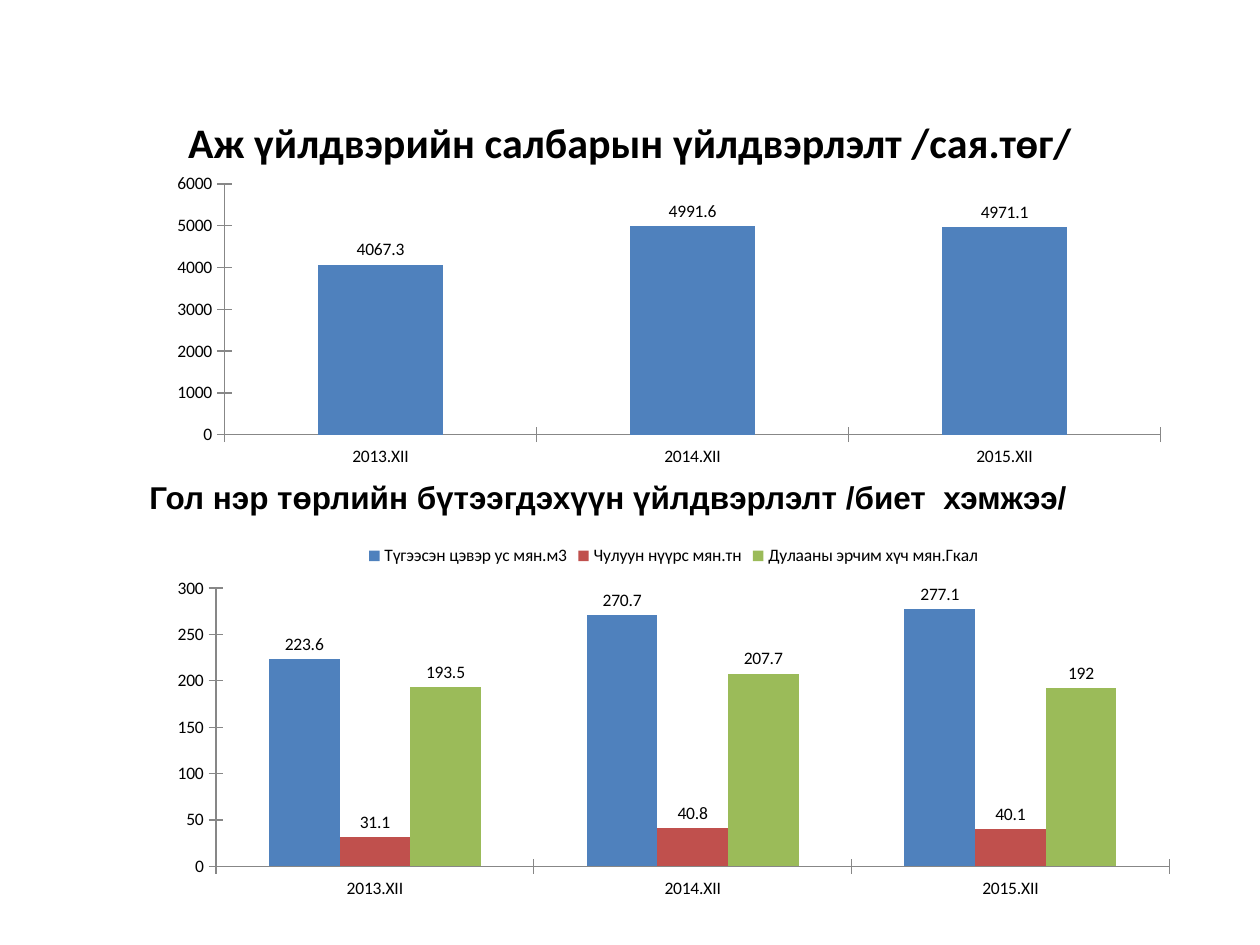
"""Builds a slide with two column charts on industrial output."""
from pptx import Presentation
from pptx.chart.data import CategoryChartData
from pptx.dml.color import RGBColor
from pptx.enum.chart import XL_CHART_TYPE, XL_LABEL_POSITION, XL_LEGEND_POSITION, XL_TICK_MARK
from pptx.enum.text import MSO_ANCHOR, MSO_AUTO_SIZE, PP_ALIGN
from pptx.util import Emu, Pt

BLACK = RGBColor(0x00, 0x00, 0x00)
GREY = RGBColor(0x87, 0x87, 0x87)
BLUE = RGBColor(0x4F, 0x81, 0xBD)
RED = RGBColor(0xC0, 0x50, 0x4D)
GREEN = RGBColor(0x9B, 0xBB, 0x59)
SERIES_COLORS = (BLUE, RED, GREEN)
EMU_PER_PX = 914400 / 126
PERIODS = ("2013.XII", "2014.XII", "2015.XII")


def px(*lengths):
    return [Emu(round(length * EMU_PER_PX)) for length in lengths]


class SlideBuilder:
    def __init__(self, slide):
        self.slide = slide
        self.chart_font = "Calibri"
        self.chart_size = Pt(10)

    def text(self, box, words, font, size, alignment, anchor, auto_size):
        frame = self.slide.shapes.add_textbox(*px(*box)).text_frame
        frame.word_wrap = True
        frame.auto_size = auto_size
        frame.vertical_anchor = anchor
        paragraph = frame.paragraphs[0]
        paragraph.alignment = alignment
        run = paragraph.add_run()
        run.text = words
        run.font.name = font
        run.font.size = Pt(size)
        run.font.bold = True
        run.font.color.rgb = BLACK

    def style_font(self, font):
        font.name = self.chart_font
        font.size = self.chart_size
        font.color.rgb = BLACK

    def column_chart(self, box, series_values, maximum, step, legend=False):
        data = CategoryChartData()
        data.categories = PERIODS
        for name, values in series_values.items():
            data.add_series(name, values)
        chart = self.slide.shapes.add_chart(XL_CHART_TYPE.COLUMN_CLUSTERED, *px(*box), data).chart
        self.style_font(chart.font)
        chart.has_title = False
        chart.has_legend = legend
        if legend:
            chart.legend.position = XL_LEGEND_POSITION.TOP
            chart.legend.include_in_layout = False
            self.style_font(chart.legend.font)
        for axis in (chart.category_axis, chart.value_axis):
            axis.has_major_gridlines = False
            axis.major_tick_mark = XL_TICK_MARK.CROSS
            axis.format.line.color.rgb = GREY
            self.style_font(axis.tick_labels.font)
        chart.value_axis.minimum_scale = 0
        chart.value_axis.maximum_scale = maximum
        chart.value_axis.major_unit = step
        plot = chart.plots[0]
        plot.vary_by_categories = False
        plot.gap_width = 150
        plot.overlap = 0
        for series, color in zip(plot.series, SERIES_COLORS):
            series.format.fill.solid()
            series.format.fill.fore_color.rgb = color
            labels = series.data_labels
            labels.show_value = True
            labels.position = XL_LABEL_POSITION.OUTSIDE_END
            self.style_font(labels.font)


def main():
    presentation = Presentation()
    presentation.slide_width, presentation.slide_height = px(1260, 945)
    builder = SlideBuilder(presentation.slides.add_slide(presentation.slide_layouts[6]))
    builder.text((63, 98, 1134, 88), "Аж үйлдвэрийн салбарын үйлдвэрлэлт /сая.төг/",
                 "Calibri", 24, PP_ALIGN.CENTER, MSO_ANCHOR.MIDDLE, MSO_AUTO_SIZE.NONE)
    builder.text((137, 472, 1092, 50), "Гол нэр төрлийн бүтээгдэхүүн үйлдвэрлэлт /биет  хэмжээ/",
                 "Arial", 18, PP_ALIGN.LEFT, MSO_ANCHOR.TOP, MSO_AUTO_SIZE.SHAPE_TO_FIT_TEXT)
    builder.column_chart((157, 532, 1033, 374), {
        "Түгээсэн цэвэр ус мян.м3": (223.6, 270.7, 277.1),
        "Чулуун нүүрс мян.тн": (31.1, 40.8, 40.1),
        "Дулааны эрчим хүч мян.Гкал": (193.5, 207.7, 192),
    }, 300, 50, legend=True)
    builder.column_chart((157, 168, 1024, 305), {"Series 1": (4067.3, 4991.6, 4971.1)}, 6000, 1000)
    presentation.save("out.pptx")


if __name__ == "__main__":
    main()
